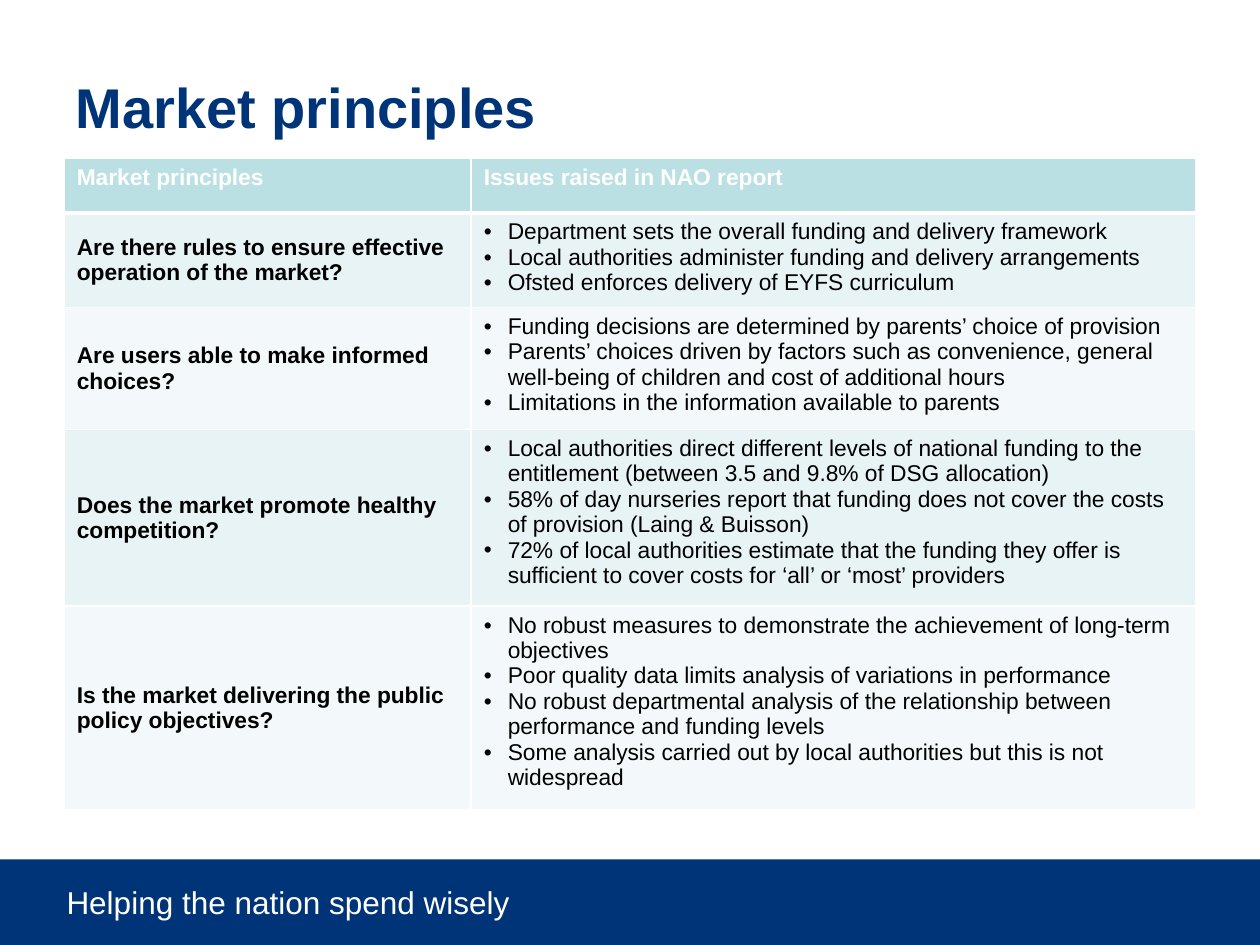
import pptx
import pptx.util
import pptx.dml.color
import pptx.enum.shapes
import pptx.enum.text
import pptx.oxml.ns
from dataclasses import dataclass
from lxml import etree

Inches = pptx.util.Inches
Pt = pptx.util.Pt
RGB = pptx.dml.color.RGBColor
Anchor = pptx.enum.text.MSO_ANCHOR


@dataclass(frozen=True)
class Theme:
    font: str = "Arial"
    navy: str = "003478"
    white: str = "FFFFFF"
    black: str = "000000"
    head: str = "BBE0E3"
    bands: tuple = ("E7F3F4", "F3F9FA")
    title: int = 32
    foot: int = 18
    body: int = 13


theme = Theme()


def write(para, text, size, color, bold=False):
    run = para.add_run()
    run.text = text
    run.font.name = theme.font
    run.font.size = Pt(size)
    run.font.bold = bold
    run.font.color.rgb = RGB.from_string(color)


def style(cell, fill, base=1):
    """Fill a cell and draw its white borders; base is the bottom width."""
    props = cell._tc.get_or_add_tcPr()
    for side, width in (("lnL", 1), ("lnR", 1), ("lnT", 1), ("lnB", base)):
        line = etree.SubElement(props, pptx.oxml.ns.qn(f"a:{side}"), w=str(Pt(width)))
        solid = etree.SubElement(line, pptx.oxml.ns.qn("a:solidFill"))
        etree.SubElement(solid, pptx.oxml.ns.qn("a:srgbClr"), val=theme.white)
    cell.fill.solid()
    cell.fill.fore_color.rgb = RGB.from_string(fill)


heads = ("Market principles", "Issues raised in NAO report")
rows = (
    ("Are there rules to ensure effective operation of the market?", (
        "Department sets the overall funding and delivery framework",
        "Local authorities administer funding and delivery arrangements",
        "Ofsted enforces delivery of EYFS curriculum",
    )),
    ("Are users able to make informed choices?", (
        "Funding decisions are determined by parents’ choice of provision",
        "Parents’ choices driven by factors such as convenience, general "
        "well-being of children and cost of additional hours",
        "Limitations in the information available to parents",
    )),
    ("Does the market promote healthy competition?", (
        "Local authorities direct different levels of national funding to the "
        "entitlement (between 3.5 and 9.8% of DSG allocation)",
        "58% of day nurseries report that funding does not cover the costs "
        "of provision (Laing & Buisson)",
        "72% of local authorities estimate that the funding they offer is "
        "sufficient to cover costs for ‘all’ or ‘most’ providers",
    )),
    ("Is the market delivering the public policy objectives?", (
        "No robust measures to demonstrate the achievement of long-term objectives",
        "Poor quality data limits analysis of variations in performance",
        "No robust departmental analysis of the relationship between "
        "performance and funding levels",
        "Some analysis carried out by local authorities but this is not widespread",
    )),
)
widths = (3.23, 5.75)
heights = (0.43, 0.69, 0.91, 1.31, 1.51)

deck = pptx.Presentation()
deck.slide_width = Inches(10)
deck.slide_height = Inches(7.5)
slide = deck.slides.add_slide(deck.slide_layouts[5])

# Footer band and motto
band = slide.shapes.add_shape(
    pptx.enum.shapes.MSO_SHAPE.RECTANGLE,
    Inches(0), Inches(6.82), Inches(10), Inches(0.71))
band.shadow.inherit = False
band.fill.solid()
band.fill.fore_color.rgb = RGB.from_string(theme.navy)
band.line.fill.background()

motto = slide.shapes.add_textbox(Inches(0.43), Inches(6.96), Inches(7.8), Inches(0.4))
motto.text_frame.word_wrap = True
write(motto.text_frame.paragraphs[0], "Helping the nation spend wisely",
      theme.foot, theme.white)

# Title
title = slide.shapes.title
title.left, title.top = Inches(0.5), Inches(0.22)
title.width, title.height = Inches(8.99), Inches(1.25)
title.text_frame.vertical_anchor = Anchor.MIDDLE
para = title.text_frame.paragraphs[0]
para.alignment = pptx.enum.text.PP_ALIGN.LEFT
write(para, "Market principles", theme.title, theme.navy, True)

# Table grid
table = slide.shapes.add_table(
    len(heights), len(widths), Inches(0.51), Inches(1.26),
    Inches(sum(widths)), Inches(sum(heights))).table
for col, width in zip(table.columns, widths):
    col.width = Inches(width)
for row, height in zip(table.rows, heights):
    row.height = Inches(height)

# Header row
for col, text in enumerate(heads):
    cell = table.cell(0, col)
    style(cell, theme.head, 3)
    write(cell.text_frame.paragraphs[0], text, theme.body, theme.white, True)

# Questions with their bulleted issues
for num, (ask, issues) in enumerate(rows, 1):
    left, right = table.cell(num, 0), table.cell(num, 1)
    for cell in (left, right):
        style(cell, theme.bands[(num - 1) % 2])
    left.vertical_anchor = Anchor.MIDDLE
    write(left.text_frame.paragraphs[0], ask, theme.body, theme.black, True)
    for pos, issue in enumerate(issues):
        frame = right.text_frame
        para = frame.add_paragraph() if pos else frame.paragraphs[0]
        props = para._p.get_or_add_pPr()
        props.set("marL", str(Inches(0.19)))
        props.set("indent", str(Inches(-0.19)))
        etree.SubElement(props, pptx.oxml.ns.qn("a:buFont"), typeface=theme.font)
        etree.SubElement(props, pptx.oxml.ns.qn("a:buChar"), char="•")
        write(para, issue, theme.body, theme.black)

deck.save("out.pptx")
